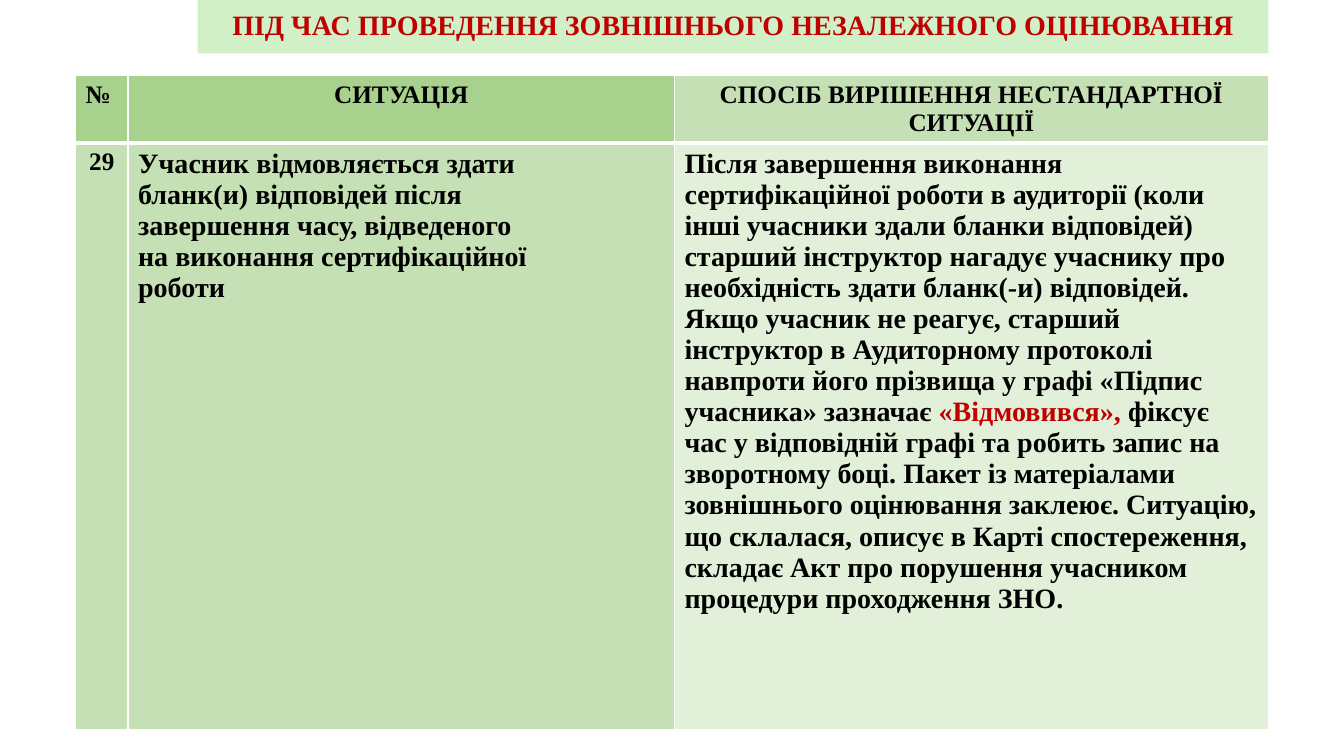
import pptx
import pptx.dml.color
import pptx.enum.text
import pptx.oxml
import pptx.oxml.ns
import pptx.util

PX = 9144
FONT = "Times New Roman"
RED, BLACK, WHITE = "C00000", "000000", "FFFFFF"
CENTER = pptx.enum.text.PP_ALIGN.CENTER
LEFT = pptx.enum.text.PP_ALIGN.LEFT
TITLE = "ПІД ЧАС ПРОВЕДЕННЯ ЗОВНІШНЬОГО НЕЗАЛЕЖНОГО ОЦІНЮВАННЯ"
SITUATION = """Учасник відмовляється здати
бланк(и) відповідей після
завершення часу, відведеного
на виконання сертифікаційної
роботи"""
REMINDER = """Після завершення виконання сертифікаційної роботи в аудиторії \
(коли інші учасники здали бланки відповідей) старший інструктор нагадує учаснику \
про необхідність здати бланк(-и) відповідей. Якщо учасник не реагує, старший
інструктор в Аудиторному протоколі навпроти його прізвища у графі \
«Підпис учасника» зазначає """
RECORD = """фіксує час у відповідній графі та робить запис на
зворотному боці. Пакет із матеріалами
зовнішнього оцінювання заклеює. Ситуацію,
що склалася, описує в Карті спостереження,
складає Акт про порушення учасником
процедури проходження ЗНО."""


def px(n):
    """Convert px to EMU."""
    return pptx.util.Emu(n * PX)


def rgb(color):
    """Turn a hex string into a colour."""
    return pptx.dml.color.RGBColor.from_string(color)


def add_text(p, text, size=18, color=BLACK, align=LEFT):
    """Append bold text to a paragraph, breaking lines at newlines."""
    p.alignment = align
    for i, line in enumerate(text.split("\n")):
        if i:
            p.add_line_break()
        r = p.add_run()
        r.text = line
        r.font.name = FONT
        r.font.size = pptx.util.Pt(size)
        r.font.bold = True
        r.font.color.rgb = rgb(color)


def add_title(s):
    """Format the title placeholder as a band at the top."""
    sp = s.shapes.title
    sp.left, sp.top, sp.width, sp.height = map(px, (196, 0, 1062, 53))
    sp.fill.solid()
    sp.fill.fore_color.rgb = rgb("D1F0C8")
    tf = sp.text_frame
    tf.word_wrap = True
    tf.auto_size = pptx.enum.text.MSO_AUTO_SIZE.NONE
    tf.vertical_anchor = pptx.enum.text.MSO_ANCHOR.MIDDLE
    p = tf.paragraphs[0]
    p.line_spacing = 0.9
    add_text(p, TITLE, size=20, color=RED, align=CENTER)


def style_cell(cell, fill, top, bottom):
    """Give a cell white borders and a solid fill."""
    tc_pr = cell._tc.get_or_add_tcPr()
    for side, width in (("L", 1), ("R", 1), ("T", top), ("B", bottom)):
        tc_pr.append(pptx.oxml.parse_xml(
            f'<a:ln{side} {pptx.oxml.ns.nsdecls("a")} w="{pptx.util.Pt(width)}">'
            f'<a:solidFill><a:srgbClr val="{WHITE}"/></a:solidFill></a:ln{side}>'))
    cell.fill.solid()
    cell.fill.fore_color.rgb = rgb(fill)


def add_table(s, widths, heights, rows):
    """Add a table whose cells are (fill, alignment, size, runs)."""
    frame = s.shapes.add_table(len(heights), len(widths), px(75), px(75),
                               px(sum(widths)), px(sum(heights)))
    table = frame.table
    table.first_row = table.horz_banding = False
    for column, width in zip(table.columns, widths):
        column.width = px(width)
    for i, (height, row) in enumerate(zip(heights, rows)):
        table.rows[i].height = px(height)
        for j, (fill, align, size, runs) in enumerate(row):
            cell = table.cell(i, j)
            style_cell(cell, fill, top=3 if i else 1, bottom=1 if i else 3)
            for text, color in runs:
                add_text(cell.text_frame.paragraphs[0], text,
                         size=size, color=color, align=align)


def main():
    """Build and save the slide."""
    prs = pptx.Presentation()
    prs.slide_width, prs.slide_height = px(1333), px(750)
    s = prs.slides.add_slide(prs.slide_layouts[5])
    add_title(s)
    dark, mid, light = "A9D18E", "C5E0B4", "E2F0D9"
    add_table(s, [52, 542, 589], [67, 582], [
        [(dark, LEFT, 18, [("№", BLACK)]),
         (dark, CENTER, 18, [("СИТУАЦІЯ", BLACK)]),
         (mid, CENTER, 18, [("СПОСІБ ВИРІШЕННЯ НЕСТАНДАРТНОЇ СИТУАЦІЇ", BLACK)])],
        [(mid, CENTER, 18, [("29", BLACK)]),
         (mid, LEFT, 20, [(SITUATION, BLACK)]),
         (light, LEFT, 20, [(REMINDER, BLACK), ("«Відмовився», ", RED),
                            (RECORD, BLACK)])],
    ])
    prs.save("out.pptx")


if __name__ == "__main__":
    main()
